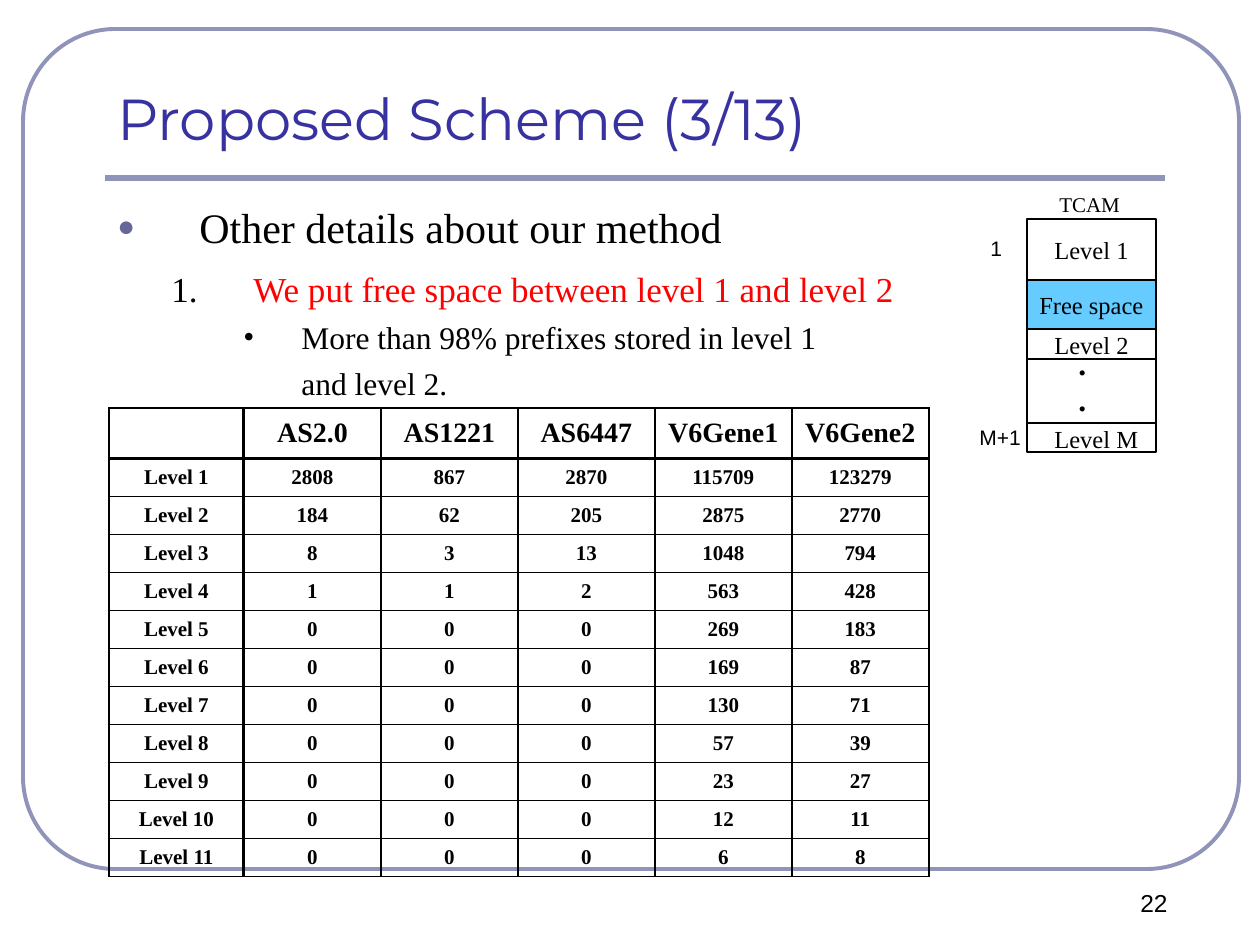
from lxml import etree
from pptx import Presentation
from pptx.dml.color import RGBColor
from pptx.enum.shapes import MSO_CONNECTOR, MSO_SHAPE
from pptx.enum.text import MSO_ANCHOR, PP_ALIGN
from pptx.oxml import parse_xml
from pptx.oxml.ns import nsdecls, qn
from pptx.util import Pt

PX = 914400 / 126
STRAIGHT = MSO_CONNECTOR.STRAIGHT
RECT, ROUND_RECT = MSO_SHAPE.RECTANGLE, MSO_SHAPE.ROUNDED_RECTANGLE
CENTER, LEFT = PP_ALIGN.CENTER, PP_ALIGN.LEFT
MIDDLE, BOTTOM = MSO_ANCHOR.MIDDLE, MSO_ANCHOR.BOTTOM
SERIF, SANS, HEADING = "Times New Roman", "Arial", "Montserrat"
BLACK, WHITE, RED, FRAME = "000000", "FFFFFF", "FF0000", "9094B8"


def paint(fill, color):
    fill.solid()
    fill.fore_color.rgb = RGBColor.from_string(color)


def add_run(p, text, size, font=SERIF, color=BLACK, bold=False):
    r = p.add_run()
    r.text = text
    r.font.size = Pt(size)
    r.font.name = font
    r.font.bold = bold
    paint(r.font.fill, color)


prs = Presentation()
prs.slide_width, prs.slide_height = round(1260 * PX), round(945 * PX)
s = prs.slides.add_slide(prs.slide_layouts[6])

shapes = {}
for name, kind, box, fill, line, weight in [
    ("frame", ROUND_RECT, (23, 29, 1216, 840), None, FRAME, 2.25),
    ("memory", RECT, (1027, 219, 129, 233), WHITE, BLACK, 0.75),
    ("free", RECT, (1027, 280, 129, 49), "66CCFF", BLACK, 0.75),
]:
    sp = s.shapes.add_shape(kind, *[round(v * PX) for v in box])
    sp.shadow.inherit = False
    if fill:
        paint(sp.fill, fill)
    else:
        sp.fill.background()
    paint(sp.line.fill, line)
    sp.line.width = Pt(weight)
    shapes[name] = sp

shapes["frame"].adjustments[0] = 0.11
tf = shapes["free"].text_frame
tf.word_wrap = False
tf.vertical_anchor = MIDDLE
p = tf.paragraphs[0]
p.alignment = CENTER
add_run(p, "Free space", 14)

for x1, x2, y, color, weight in [
    (105, 1165, 178, FRAME, 3),
    (1027, 1156, 359, BLACK, 0.75),
    (1027, 1156, 423, BLACK, 0.75),
]:
    line = s.shapes.add_connector(STRAIGHT, *[round(v * PX) for v in (x1, y, x2, y)])
    paint(line.line.fill, color)
    line.line.width = Pt(weight)
    etree.SubElement(line._element.spPr, qn("a:effectLst"))

for text, box, size, font, color, align, before in [
    ("Proposed Scheme (3/13)", (105, 76, 1060, 82), 33, HEADING, "3732A0", LEFT, 0),
    ("22", (1086, 882, 136, 63), 14, SANS, BLACK, CENTER, 0),
    ("M+1", (967, 418, 70, 38), 12, SANS, BLACK, LEFT, 1.5),
    ("1", (978, 229, 67, 38), 12, SANS, BLACK, LEFT, 1.5),
    ("TCAM", (1047, 185, 90, 38), 12, SERIF, BLACK, LEFT, 1.5),
    ("Level 1", (1042, 229, 110, 42), 14, SERIF, BLACK, LEFT, 1.5),
    ("Level 2", (1042, 324, 110, 42), 14, SERIF, BLACK, LEFT, 1.5),
    ("Level M", (1042, 418, 110, 42), 14, SERIF, BLACK, LEFT, 1.5),
]:
    tf = s.shapes.add_textbox(*[round(v * PX) for v in box]).text_frame
    tf.word_wrap = True
    if font == HEADING:
        tf.vertical_anchor = BOTTOM
    p = tf.paragraphs[0]
    p.alignment = align
    p.space_before = Pt(before)
    add_run(p, text, size, font, color)

tf = s.shapes.add_textbox(*[round(v * PX) for v in (1066, 354, 34, 69)]).text_frame
tf.word_wrap = True
for p, before in [(tf.paragraphs[0], 2), (tf.add_paragraph(), 10)]:
    p.line_spacing = 0.5
    p.space_before = Pt(before)
    add_run(p, ".", 18, bold=True)

tf = s.shapes.add_textbox(*[round(v * PX) for v in (105, 195, 1060, 624)]).text_frame
tf.word_wrap = True
NUMBER = '<a:buAutoNum %s type="arabicPeriod"/>'
DOT = '<a:buChar %s char="•"/>'
DISC = '<a:buChar %s char="●"/>'
for i, (text, size, color, level, margin, hang, before, bullet, bullet_color, scale) in enumerate([
    ("Other details about our method", 24, BLACK, 0, 82, 82, 4, DISC, "666699", 70),
    ("We put free space between level 1 and level 2", 20, RED, 1, 136, 82, 5, NUMBER, BLACK, 100),
    ("More than 98% prefixes stored in level 1", 18, BLACK, 2, 184, 58, 4, DOT, BLACK, 100),
    ("and level 2.", 18, BLACK, 2, 184, 0, 5, None, BLACK, 100),
]):
    p = tf.add_paragraph() if i else tf.paragraphs[0]
    p.level = level
    p.space_before = Pt(before)
    add_run(p, text, size, color=color)
    if level == 1:
        add_run(p, " ", 24)
    pPr = p._p.get_or_add_pPr()
    pPr.set("marL", str(round(margin * PX)))
    pPr.set("indent", str(round(-hang * PX)))
    if bullet:
        ns = nsdecls("a")
        pPr.append(parse_xml(f'<a:buClr {ns}><a:srgbClr val="{bullet_color}"/></a:buClr>'))
        pPr.append(parse_xml(f'<a:buSzPct {ns} val="{scale * 1000}"/>'))
        pPr.append(parse_xml(f'<a:buFont {ns} typeface="{SERIF}"/>'))
        pPr.append(parse_xml(bullet % ns))

rows = [
    ["", "AS2.0", "AS1221", "AS6447", "V6Gene1", "V6Gene2"],
    ["Level 1", "2808", "867", "2870", "115709", "123279"],
    ["Level 2", "184", "62", "205", "2875", "2770"],
    ["Level 3", "8", "3", "13", "1048", "794"],
    ["Level 4", "1", "1", "2", "563", "428"],
    ["Level 5", "0", "0", "0", "269", "183"],
    ["Level 6", "0", "0", "0", "169", "87"],
    ["Level 7", "0", "0", "0", "130", "71"],
    ["Level 8", "0", "0", "0", "57", "39"],
    ["Level 9", "0", "0", "0", "23", "27"],
    ["Level 10", "0", "0", "0", "12", "11"],
    ["Level 11", "0", "0", "0", "6", "8"],
]
box = (109, 408, 820, 465)
table = s.shapes.add_table(len(rows), len(rows[0]), *[round(v * PX) for v in box]).table
table.first_row = table.horz_banding = False
for i, column in enumerate(table.columns):
    column.width = round((137 if i else 135) * PX)
for i, row in enumerate(table.rows):
    row.height = round((38 if i else 47) * PX)
for i, row in enumerate(rows):
    for j, text in enumerate(row):
        cell = table.cell(i, j)
        cell.vertical_anchor = MIDDLE
        p = cell.text_frame.paragraphs[0]
        p.alignment = CENTER
        add_run(p, text, 12 if i else 16, bold=True)
        tcPr = cell._tc.get_or_add_tcPr()
        for side, thick in [("L", j == 1), ("R", j == 0), ("T", i == 1), ("B", i == 0)]:
            ln = etree.SubElement(tcPr, qn(f"a:ln{side}"), w=str(Pt(2 if thick else 1)))
            fill = etree.SubElement(ln, qn("a:solidFill"))
            etree.SubElement(fill, qn("a:srgbClr"), val=BLACK)
        cell.fill.background()

prs.save("out.pptx")
